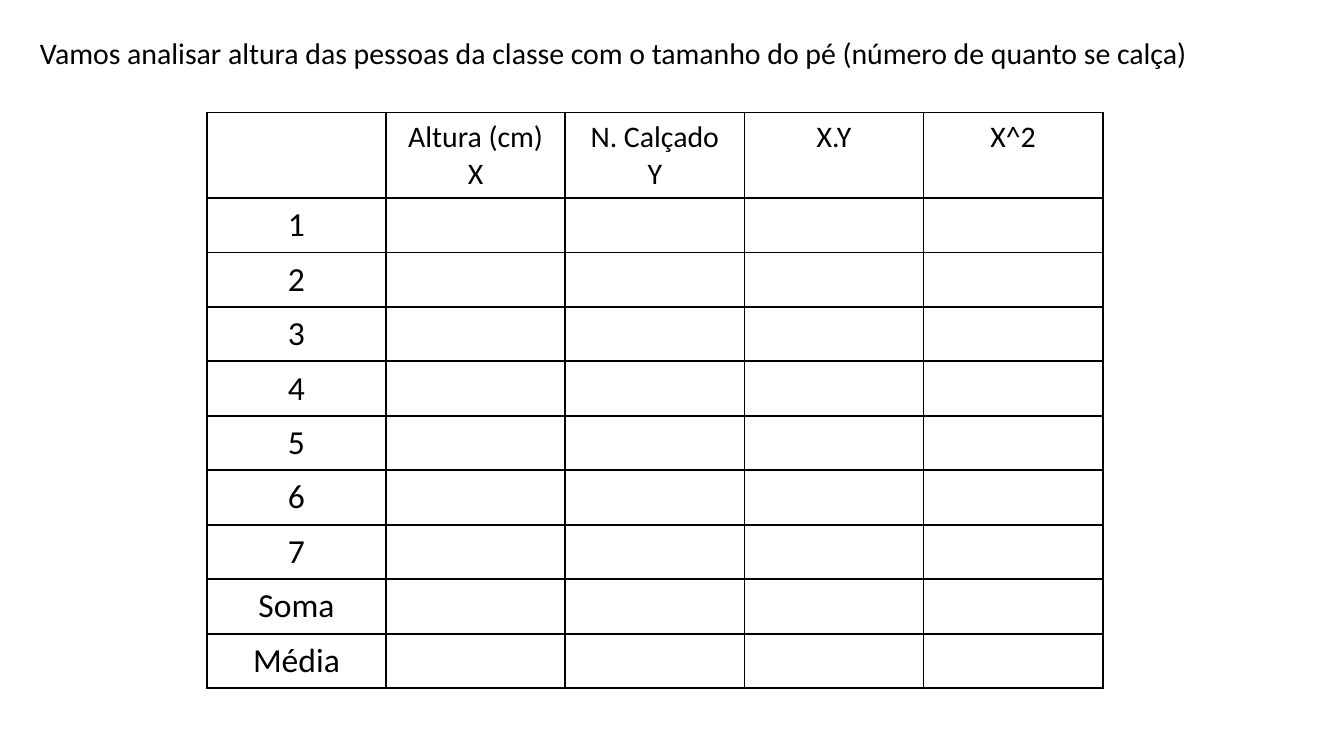
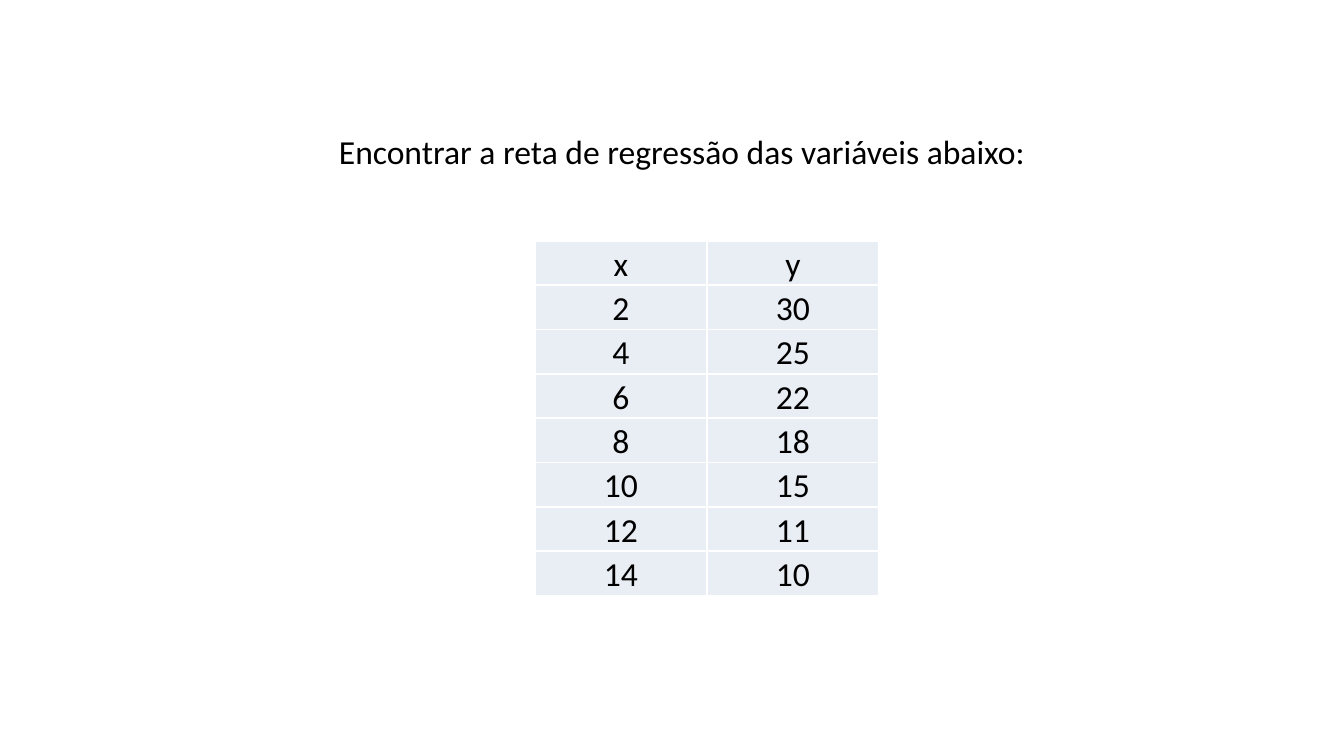
import dataclasses

import lxml.etree
import pptx
import pptx.dml.color
import pptx.enum.text
import pptx.oxml.ns
import pptx.util

Cm = pptx.util.Cm
Align = pptx.enum.text.PP_ALIGN
Anchor = pptx.enum.text.MSO_ANCHOR


@dataclasses.dataclass(frozen=True)
class Theme:
    font: str = "Calibri"
    ink: str = "000000"
    paper: str = "FFFFFF"
    cell_tint: str = "E9EDF4"
    small: int = 16
    body: int = 18
    border: int = 1


@dataclasses.dataclass(frozen=True)
class Box:
    left: float
    top: float
    width: float
    height: float

    def lengths(self):
        return Cm(self.left), Cm(self.top), Cm(self.width), Cm(self.height)


THEME = Theme()
TITLE_ONLY = 5


def color(value):
    return pptx.dml.color.RGBColor.from_string(value)


def format_text(text_frame, size, alignment):
    for paragraph in text_frame.paragraphs:
        paragraph.alignment = alignment
        for run in paragraph.runs:
            run.font.name = THEME.font
            run.font.size = pptx.util.Pt(size)
            run.font.color.rgb = color(THEME.ink)


def add_titled_slide(presentation, box, text, size, alignment):
    slide = presentation.slides.add_slide(presentation.slide_layouts[TITLE_ONLY])
    title = slide.shapes.title
    title.left, title.top, title.width, title.height = box.lengths()
    text_frame = title.text_frame
    text_frame.text = text
    text_frame.word_wrap = True
    text_frame.vertical_anchor = Anchor.TOP
    text_frame.auto_size = pptx.enum.text.MSO_AUTO_SIZE.SHAPE_TO_FIT_TEXT
    format_text(text_frame, size, alignment)
    return slide


def set_borders(cell, line_color):
    properties = cell._tc.get_or_add_tcPr()
    for side in ("a:lnL", "a:lnR", "a:lnT", "a:lnB"):
        line = lxml.etree.SubElement(properties, pptx.oxml.ns.qn(side))
        line.set("w", str(pptx.util.Pt(THEME.border)))
        fill = lxml.etree.SubElement(line, pptx.oxml.ns.qn("a:solidFill"))
        lxml.etree.SubElement(fill, pptx.oxml.ns.qn("a:srgbClr")).set("val", line_color)


def add_grid(slide, box, rows, line_color, header_height, header_size):
    frame = slide.shapes.add_table(len(rows), len(rows[0]), *box.lengths())
    table = frame.table
    table.first_row = False
    table.horz_banding = False
    row_height = (box.height - header_height) / (len(rows) - 1)
    for column in table.columns:
        column.width = Cm(box.width / len(rows[0]))
    for index, values in enumerate(rows):
        table.rows[index].height = Cm(row_height if index else header_height)
        for cell, value in zip(table.rows[index].cells, values):
            cell.text = value
            format_text(cell.text_frame, THEME.body if index else header_size, Align.CENTER)
            set_borders(cell, line_color)
            cell.fill.background()
    return table


def add_survey_slide(presentation):
    slide = add_titled_slide(
        presentation,
        Box(0.5, 0.53, 24.6, 0.94),
        "Vamos analisar altura das pessoas da classe com o tamanho do pé (número de quanto se calça)",
        THEME.small,
        Align.LEFT,
    )
    header = ["", "Altura (cm)\nX", "N. Calçado\nY", "X.Y", "X^2"]
    labels = [str(number) for number in range(1, 8)] + ["Soma", "Média"]
    rows = [header] + [[label] + [""] * 4 for label in labels]
    add_grid(slide, Box(3.91, 2.13, 16.93, 10.87), rows, THEME.ink, 1.6, THEME.small)


def add_regression_slide(presentation):
    slide = add_titled_slide(
        presentation,
        Box(2.49, 2.34, 20.8, 1.02),
        "Encontrar a reta de regressão das variáveis abaixo:",
        THEME.body,
        Align.CENTER,
    )
    y_values = [30, 25, 22, 18, 15, 11, 10]
    rows = [["x", "y"]]
    rows += [[str(2 * index), str(y)] for index, y in enumerate(y_values, 1)]
    table = add_grid(slide, Box(10.11, 4.55, 6.5, 6.71), rows, THEME.paper, 0.84, THEME.body)
    for cell in table.iter_cells():
        cell.fill.solid()
        cell.fill.fore_color.rgb = color(THEME.cell_tint)
        cell.vertical_anchor = Anchor.BOTTOM
        cell.margin_left = cell.margin_right = cell.margin_top = Cm(0.02)
        cell.margin_bottom = Cm(0)


def main():
    presentation = pptx.Presentation()
    presentation.slide_width = Cm(25.4)
    presentation.slide_height = Cm(14.29)
    add_survey_slide(presentation)
    add_regression_slide(presentation)
    presentation.save("out.pptx")


if __name__ == "__main__":
    main()
